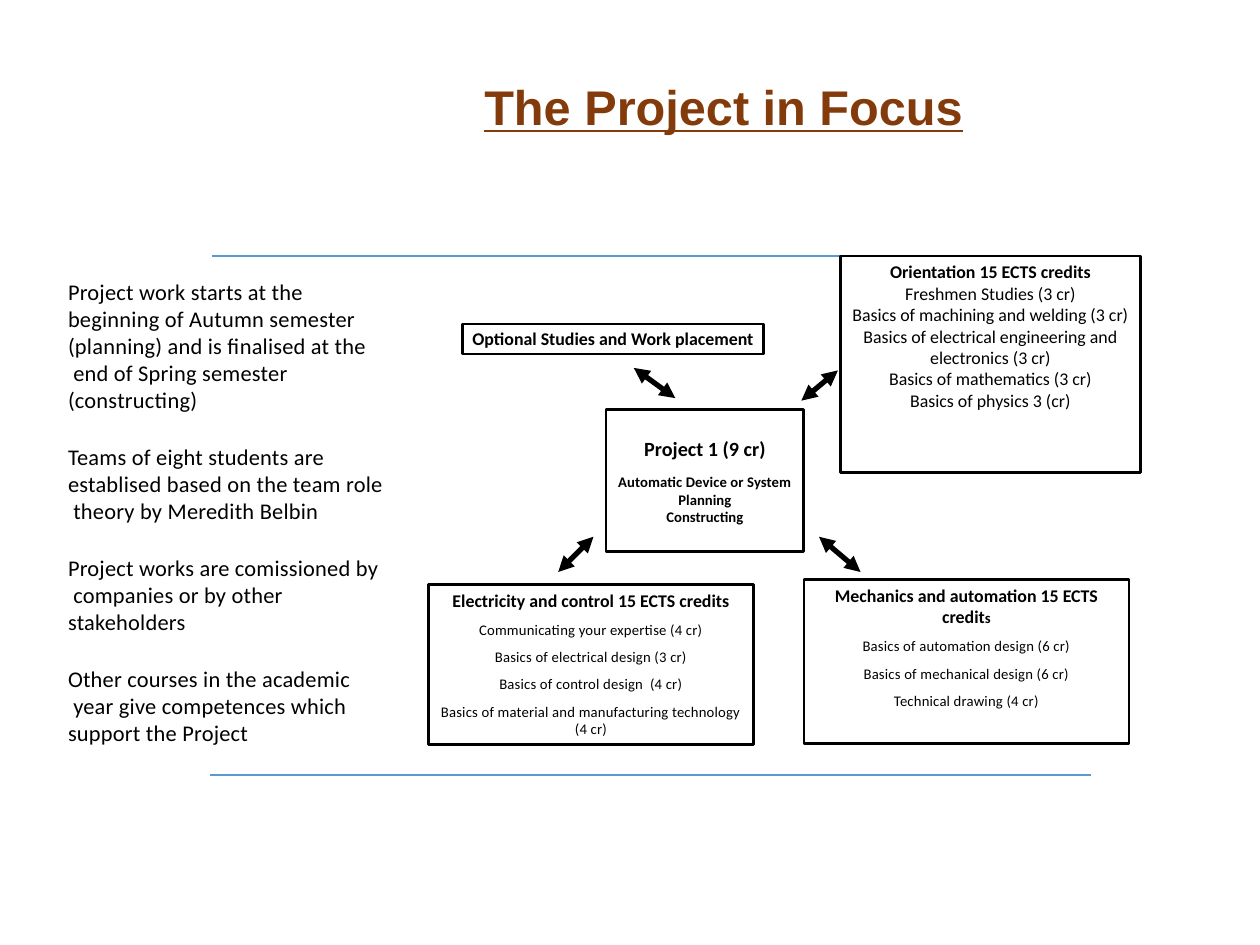
from dataclasses import dataclass

from lxml import etree
from pptx import Presentation
from pptx.dml.color import RGBColor
from pptx.enum.shapes import MSO_CONNECTOR, MSO_SHAPE
from pptx.enum.text import MSO_ANCHOR, MSO_AUTO_SIZE, PP_ALIGN
from pptx.oxml.ns import qn
from pptx.util import Inches, Pt

BLACK = RGBColor(0x00, 0x00, 0x00)
BROWN = RGBColor(0x83, 0x3B, 0x0B)
BLUE = RGBColor(0x5A, 0x9A, 0xD4)
RECTANGLE, STRAIGHT = MSO_SHAPE.RECTANGLE, MSO_CONNECTOR.STRAIGHT
TOP, MIDDLE = MSO_ANCHOR.TOP, MSO_ANCHOR.MIDDLE
LEFT, CENTER = PP_ALIGN.LEFT, PP_ALIGN.CENTER
NO_FIT = MSO_AUTO_SIZE.NONE

# The slide is a grid of 100 columns by 75 rows
COLUMNS, ROWS = 100, 75
CELL = Inches(0.1)
HEADING, DETAIL, SIDE = 10.2, 8.4, 12.8


@dataclass(frozen=True)
class Line:
    text: str
    size: float = DETAIL
    bold: bool = False
    before: float = 0
    spacing: float = 0
    ending: str = ""  # last letters, set in the detail size


@dataclass(frozen=True)
class Card:
    column: float
    row: float
    width: float
    height: float
    side_margin: float
    top_margin: float
    lines: tuple[Line, ...]


@dataclass(frozen=True)
class Note:
    row: float
    lines: tuple[str, ...]


@dataclass(frozen=True)
class Link:
    start: tuple[float, float]
    end: tuple[float, float]


def cells(count: float) -> int:
    return round(count * CELL)


def courses(*names: str) -> tuple[Line, ...]:
    return tuple(Line(name, before=5.5, spacing=0.1) for name in names)


CARDS = (
    Card(33.9, 46.3, 26, 12.9, 0.9, 0.4, (
        Line("Electricity and control 15 ECTS credits", HEADING, True),
        *courses("Communicating your expertise (4 cr)",
                 "Basics of electrical design (3 cr)",
                 "Basics of control design  (4 cr)",
                 "Basics of material and manufacturing technology (4 cr)"))),
    Card(36.6, 25.6, 24.1, 2.6, 0.5, 0.3, (
        Line("Optional Studies and Work placement", HEADING, True),)),
    Card(63.7, 45.9, 26, 13.2, 2.3, 0.4, (
        Line("Mechanics and automation 15 ECTS credit", HEADING, True, ending="s"),
        *courses("Basics of automation design (6 cr)",
                 "Basics of mechanical design (6 cr)",
                 "Technical drawing (4 cr)"))),
    Card(66.6, 20.2, 24, 17.4, 0.8, 0.4, (
        Line("Orientation 15 ECTS credits", HEADING, True),
        *(Line(name, HEADING) for name in (
            "Freshmen Studies (3 cr)",
            "Basics of machining and welding (3 cr)",
            "Basics of electrical engineering and electronics (3 cr)",
            "Basics of mathematics (3 cr)",
            "Basics of physics 3 (cr)")))),
    Card(48, 32.4, 15.9, 11.5, 0.7, 2.1, (
        Line("Project 1 (9 cr)", 11.5, True),
        Line("Automatic Device or System", bold=True, before=7.4, spacing=0.05),
        Line("Planning", bold=True),
        Line("Constructing", bold=True))),
)

NOTES = (
    Note(22.1, ("Project work starts at the", "beginning of Autumn semester",
                "(planning) and is finalised at the", " end of Spring semester",
                "(constructing)")),
    Note(35.2, ("Teams of eight students are", "establised based on the team role",
                " theory by Meredith Belbin")),
    Note(44, ("Project works are comissioned by", " companies or by other",
              "stakeholders")),
    Note(52.8, ("Other courses in the academic", " year give competences which",
                "support the Project")),
)

LINKS = (
    Link((63.6, 31.8), (66.5, 29.4)),
    Link((65, 42.6), (68.3, 45.4)),
    Link((44.3, 45.4), (47.1, 42.6)),
    Link((50.3, 29.2), (53.6, 31.6)),
)


def add_run(para, text: str, size: float, bold: bool = False,
            spacing: float = 0, color: RGBColor = BLACK, font: str = "Calibri"):
    span = para.add_run()
    span.text = text
    span.font.name, span.font.size, span.font.bold = font, Pt(size), bold
    span.font.color.rgb = color
    if spacing:
        span.font._element.set("spc", str(round(spacing * 100)))
    return span


def set_frame(frame, side: float = 0, top: float = 0) -> None:
    frame.word_wrap, frame.auto_size = True, NO_FIT
    frame.vertical_anchor = TOP
    frame.margin_left = frame.margin_right = cells(side)
    frame.margin_top, frame.margin_bottom = cells(top), 0


def add_card(slide, card: Card) -> None:
    stroke = Pt(1.5)
    box = slide.shapes.add_shape(
        RECTANGLE, cells(card.column) + stroke // 2, cells(card.row) + stroke // 2,
        cells(card.width) - stroke, cells(card.height) - stroke)
    box.shadow.inherit = False
    box.fill.background()
    box.line.color.rgb, box.line.width = BLACK, stroke
    frame = box.text_frame
    set_frame(frame, card.side_margin, card.top_margin)
    for index, line in enumerate(card.lines):
        para = frame.add_paragraph() if index else frame.paragraphs[0]
        para.alignment, para.space_before = CENTER, Pt(line.before)
        add_run(para, line.text, line.size, line.bold, line.spacing)
        if line.ending:
            add_run(para, line.ending, DETAIL, line.bold)


def add_note(slide, note: Note) -> None:
    box = slide.shapes.add_textbox(cells(5.4), cells(note.row), cells(26),
                                   cells(2.2 * len(note.lines)))
    set_frame(box.text_frame)
    para = box.text_frame.paragraphs[0]
    para.alignment = LEFT
    for index, text in enumerate(note.lines):
        if index:
            para.add_line_break()
        add_run(para, text, SIDE, spacing=0.12)


def add_line(slide, link: Link, color: RGBColor, width: float, arrows: bool = False) -> None:
    line = slide.shapes.add_connector(STRAIGHT, *map(cells, link.start + link.end))
    line.line.color.rgb, line.line.width = color, Pt(width)
    if arrows:
        for tag in ("a:headEnd", "a:tailEnd"):
            etree.SubElement(line.line._get_or_add_ln(), qn(tag), type="triangle")
    etree.SubElement(line._element.spPr, qn("a:effectLst"))


def add_title(slide) -> None:
    title = slide.shapes.title
    title.left, title.top = cells(29.6), cells(5.6)
    title.width, title.height = cells(55.7), cells(5.2)
    frame = title.text_frame
    set_frame(frame, top=0.5)
    frame.vertical_anchor = MIDDLE
    para = frame.paragraphs[0]
    para.alignment = CENTER
    span = add_run(para, "The Project in Focus", 27.8, True, color=BROWN, font="Arial")
    span.font.underline = True


def main() -> None:
    deck = Presentation()
    deck.slide_width, deck.slide_height = cells(COLUMNS), cells(ROWS)
    page = deck.slides.add_slide(deck.slide_layouts[5])

    # Rules above and below the content
    add_line(page, Link((16.7, 61.5), (86.6, 61.5)), BLUE, 0.72)
    add_line(page, Link((16.8, 20.3), (86.7, 20.3)), BLUE, 0.96)
    add_title(page)

    # Study modules around the project, with the arrows between them
    for card in CARDS:
        add_card(page, card)
    for link in LINKS:
        add_line(page, link, BLACK, 3, arrows=True)

    # Explanations in the left column
    for note in NOTES:
        add_note(page, note)
    deck.save("out.pptx")


if __name__ == "__main__":
    main()
